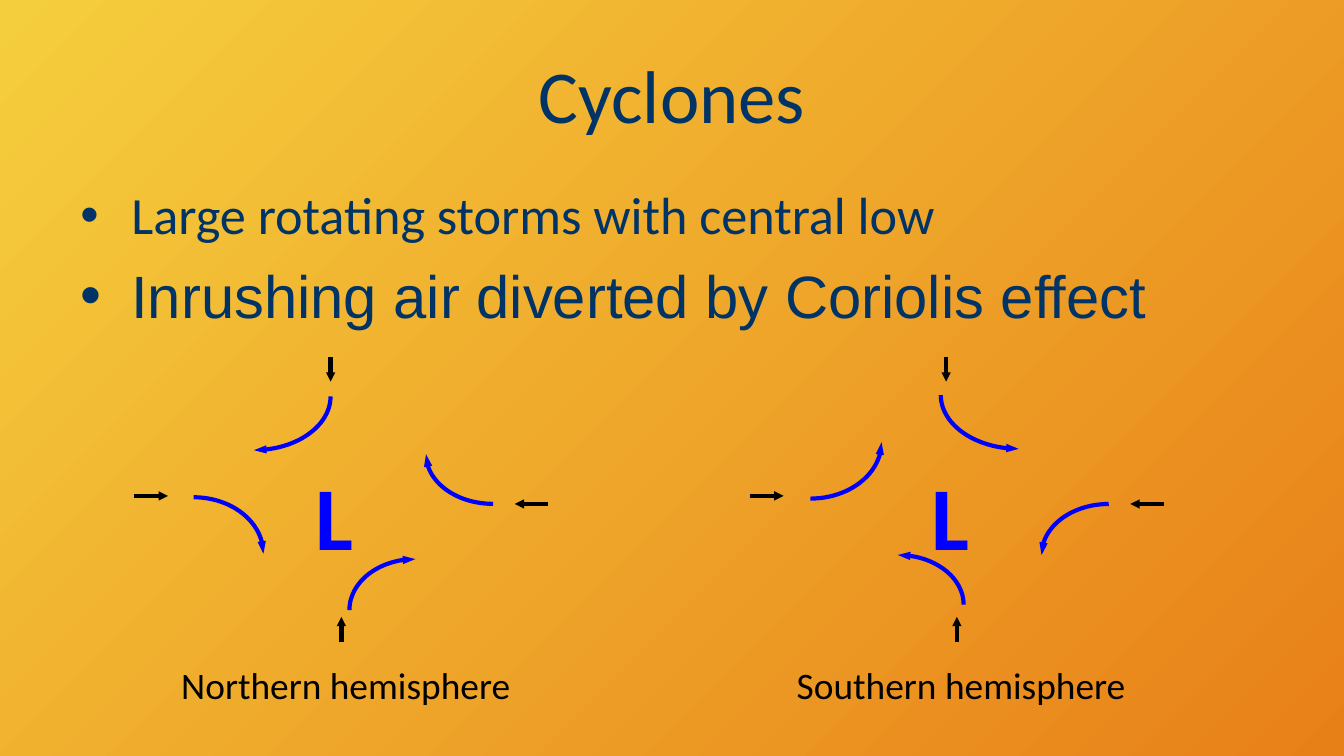
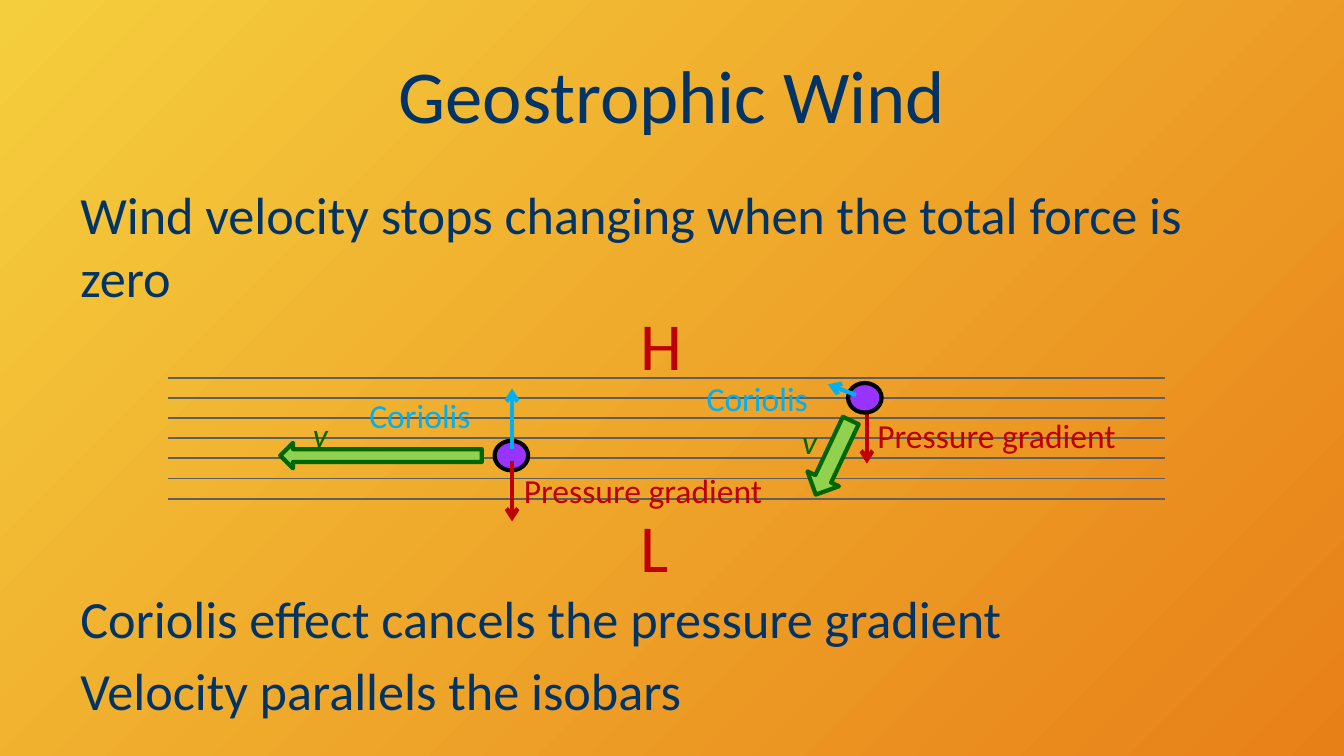
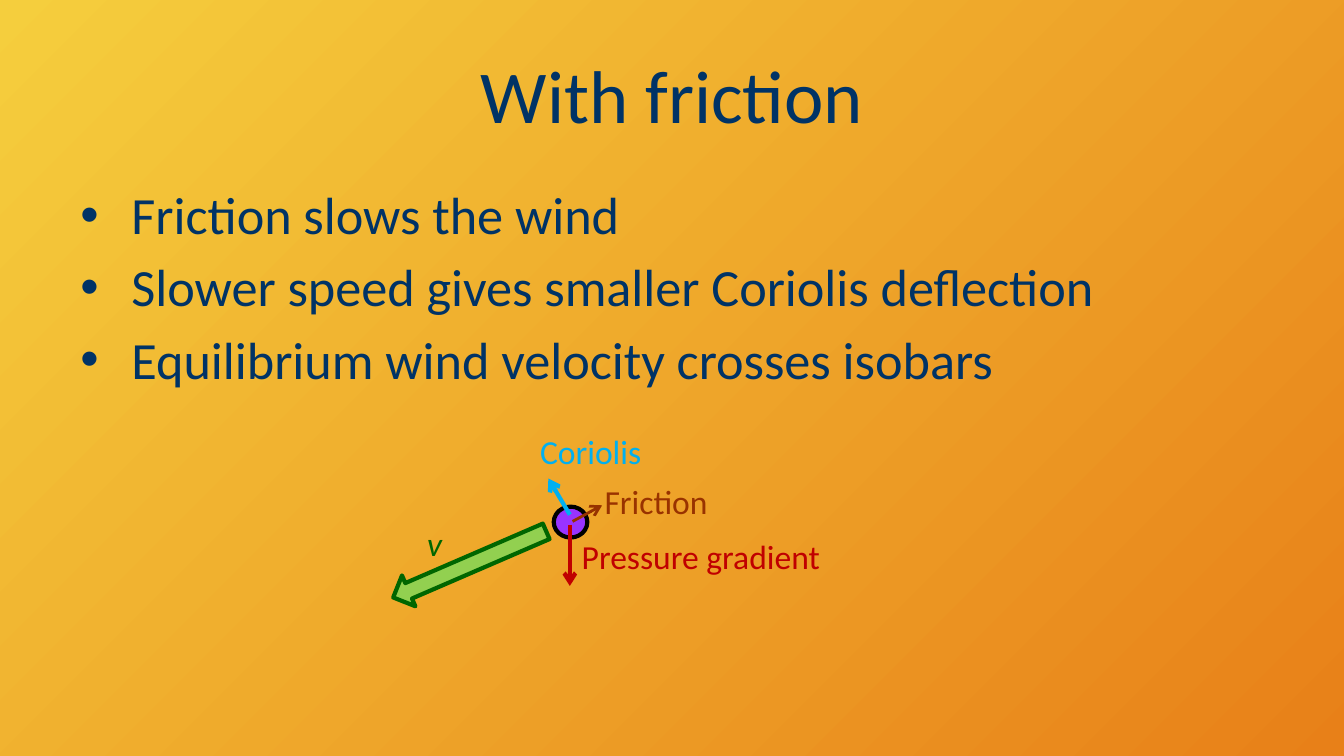
from math import cos, pi, sin

from lxml import etree
from pptx import Presentation
from pptx.dml.color import RGBColor
from pptx.enum.shapes import MSO_CONNECTOR, MSO_SHAPE
from pptx.enum.text import MSO_ANCHOR, MSO_AUTO_SIZE, PP_ALIGN
from pptx.oxml.ns import qn
from pptx.util import Pt

PX = 9144  # 100 px to the inch
STRAIGHT = MSO_CONNECTOR.STRAIGHT
ELLIPSE, DOWN_ARROW = MSO_SHAPE.OVAL, MSO_SHAPE.DOWN_ARROW
CENTER, MIDDLE = PP_ALIGN.CENTER, MSO_ANCHOR.MIDDLE
FIT_SHAPE = MSO_AUTO_SIZE.SHAPE_TO_FIT_TEXT

COLORS = {
    "sky_start": "F5CE3D", "sky_end": "E88018", "text": "003366",
    "black": "000000", "blue": "0000FF", "isobar": "5F5F5F",
    "pressure": "C00000", "coriolis": "00B0F0",
    "friction": "963200", "friction_text": "993300",
    "parcel": "9933FF", "wind": "92D050", "wind_edge": "006600",
}
BULLET_INDENT = 38
ARC_STEPS = 24
SOUTH_SHIFT = 458

# Inflow arrows and deflected paths: start x, start y, end x, end y
INFLOWS = [(100, 369, 125, 369), (246, 266, 246, 284),
           (408, 375, 383, 375), (254, 478, 254, 459)]
NORTH_ARCS = [(367, 375, 317, 338, True), (246, 295, 189, 335, False),
              (144, 370, 196, 412, True), (260, 454, 309, 416, False)]
SOUTH_ARCS = [(825, 375, 775, 413, True), (700, 294, 758, 334, False),
              (603, 371, 656, 329, True), (717, 450, 668, 413, False)]


def px(value):
    return round(value * PX)


def rgb(name):
    return RGBColor.from_string(COLORS[name])


# Text
def add_text(page, area, lines, size, color="text", font="Calibri", wrap=True):
    box = page.shapes.add_textbox(*map(px, area))
    frame = box.text_frame
    frame.word_wrap = wrap
    frame.text = "\n".join(lines)
    for paragraph in frame.paragraphs:
        for span in paragraph.runs:
            span.font.size = Pt(size)
            span.font.name = font
            span.font.color.rgb = rgb(color)
    return box


def add_body(page, area, lines, bullets=False, size=28, font="Calibri"):
    box = add_text(page, area, lines, size, font=font)
    for index, paragraph in enumerate(box.text_frame.paragraphs):
        if index:
            paragraph.space_before = Pt(5)
        if bullets:
            properties = paragraph._p.get_or_add_pPr()
            properties.set("marL", str(px(BULLET_INDENT)))
            properties.set("indent", str(px(-BULLET_INDENT)))
            etree.SubElement(properties, qn("a:buFont"), typeface="Arial")
            etree.SubElement(properties, qn("a:buChar"), char="•")


def add_label(page, area, text, color, size=18, wrap=False, bold=False, italic=False):
    box = add_text(page, area, [text], size, color, wrap=wrap)
    box.text_frame.auto_size = FIT_SHAPE
    font = box.text_frame.paragraphs[0].runs[0].font
    font.bold, font.italic = bold, italic


# Lines and shapes
def style_line(line, color, width):
    line.color.rgb = rgb(color)
    line.width = Pt(width)


def add_head(shape, kind, width, length):
    etree.SubElement(shape.line._get_or_add_ln(), qn("a:tailEnd"),
                     type=kind, w=width, len=length)


def add_line(page, ends, color, width, head=None, head_size="med"):
    line = page.shapes.add_connector(STRAIGHT, *map(px, ends))
    style_line(line.line, color, width)
    if head:
        add_head(line, head, head_size, head_size)
    etree.SubElement(line._element.spPr, qn("a:effectLst"))


def add_force(page, ends, color, width=2.25):
    add_line(page, ends, color, width, "arrow")


def add_arc(page, x0, y0, x1, y1, leaves_sideways):
    """Quarter ellipse that ends in an arrowhead."""
    points = []
    for step in range(ARC_STEPS + 1):
        angle = pi / 2 * step / ARC_STEPS
        early, late = sin(angle), 1 - cos(angle)
        across, down = (early, late) if leaves_sideways else (late, early)
        points.append((px(x0 + (x1 - x0) * across), px(y0 + (y1 - y0) * down)))
    builder = page.shapes.build_freeform(*points[0])
    builder.add_line_segments(points[1:], close=False)
    arc = builder.convert_to_shape()
    arc.shadow.inherit = False
    arc.fill.background()
    style_line(arc.line, "blue", 2.25)
    add_head(arc, "triangle", "sm", "med")


def add_filled(page, kind, area, fill, edge, rotation=0):
    shape = page.shapes.add_shape(kind, *map(px, area))
    shape.shadow.inherit = False
    shape.rotation = rotation
    shape.fill.solid()
    shape.fill.fore_color.rgb = rgb(fill)
    style_line(shape.line, edge, 2.25)


def add_parcel(page, parcel_area, wind_area, rotation, label_area):
    """Air parcel with its wind arrow and the letter v."""
    add_filled(page, ELLIPSE, parcel_area, "parcel", "black")
    add_filled(page, DOWN_ARROW, wind_area, "wind", "wind_edge", rotation)
    add_label(page, label_area, "v", "wind_edge", italic=True)


def add_cyclone(page, shift, arcs, name, name_width):
    add_label(page, (225 + shift, 338, 49, 91), "L", "blue", 48, bold=True)
    for x0, y0, x1, y1 in INFLOWS:
        add_line(page, (x0 + shift, y0, x1 + shift, y1), "black", 2.5, "triangle", "sm")
    for arc in arcs:
        add_arc(page, *arc)
    add_label(page, (125 + shift, 488, name_width, 44), name, "black", 20, wrap=True)


# Pages
def add_page(deck, title):
    page = deck.slides.add_slide(deck.slide_layouts[6])
    fill = page.background.fill
    fill.gradient()
    fill.gradient_angle = 315
    for stop, color in zip(fill.gradient_stops, ("sky_start", "sky_end")):
        stop.color.rgb = rgb(color)
    box = add_text(page, (50, 23, 900, 94), [title], 40)
    box.text_frame.vertical_anchor = MIDDLE
    box.text_frame.paragraphs[0].alignment = CENTER
    return page


def build_cyclones(deck):
    page = add_page(deck, "Cyclones")
    add_body(page, (50, 131, 900, 56), ["Large rotating storms with central low"], True)
    add_body(page, (50, 188, 900, 56), ["Inrushing air diverted by Coriolis effect"],
             True, 32, "Arial")
    add_cyclone(page, 0, NORTH_ARCS, "Northern hemisphere", 281)
    add_cyclone(page, SOUTH_SHIFT, SOUTH_ARCS, "Southern hemisphere", 300)


def build_geostrophic(deck):
    page = add_page(deck, "Geostrophic Wind")
    # Isobars between high and low pressure
    for index in range(7):
        y = 281 + 15 * index
        add_line(page, (125, y, 867, y), "isobar", 1)
    add_label(page, (467, 221, 52, 71), "H", "pressure", 36)
    add_label(page, (467, 371, 41, 71), "L", "pressure", 36)
    add_body(page, (50, 131, 900, 112),
             ["Wind velocity stops changing when the total force is zero"])
    add_body(page, (50, 431, 917, 112),
             ["Coriolis effect cancels the pressure gradient",
              "Velocity parallels the isobars"])
    # Wind still turning
    add_label(page, (643, 304, 200, 40), "Pressure gradient", "pressure")
    add_force(page, (645, 300, 645, 345), "pressure")
    add_parcel(page, (631, 285, 25, 22), (607, 310, 26, 61), 25.3, (587, 308, 31, 40))
    add_force(page, (637, 294, 616, 286), "coriolis")
    add_label(page, (516, 276, 96, 40), "Coriolis", "coriolis")
    # Wind in balance
    add_parcel(page, (368, 328, 25, 22), (274, 264, 19, 150), 90, (223, 303, 31, 40))
    add_force(page, (381, 334, 381, 289), "coriolis")
    add_label(page, (265, 289, 104, 40), "Coriolis", "coriolis", wrap=True)
    add_label(page, (380, 345, 200, 40), "Pressure gradient", "pressure")
    add_force(page, (381, 343, 381, 388), "pressure")


def build_friction(deck):
    page = add_page(deck, "With friction")
    add_body(page, (50, 131, 900, 371),
             ["Friction slows the wind",
              "Slower speed gives smaller Coriolis deflection",
              "Equilibrium wind velocity crosses isobars"], True)
    add_parcel(page, (412, 377, 25, 23), (337, 358, 25, 124), 66.6, (308, 384, 33, 40))
    add_force(page, (424, 383, 408, 356), "coriolis")
    add_label(page, (392, 316, 104, 40), "Coriolis", "coriolis", wrap=True)
    add_label(page, (423, 394, 200, 40), "Pressure gradient", "pressure")
    add_force(page, (424, 391, 424, 436), "pressure")
    add_force(page, (426, 388, 448, 376), "friction", 1.5)
    add_label(page, (440, 353, 104, 40), "Friction", "friction_text", wrap=True)


def main():
    deck = Presentation()
    deck.slide_width, deck.slide_height = px(1000), px(562.5)
    build_cyclones(deck)
    build_geostrophic(deck)
    build_friction(deck)
    deck.save("out.pptx")


if __name__ == "__main__":
    main()
